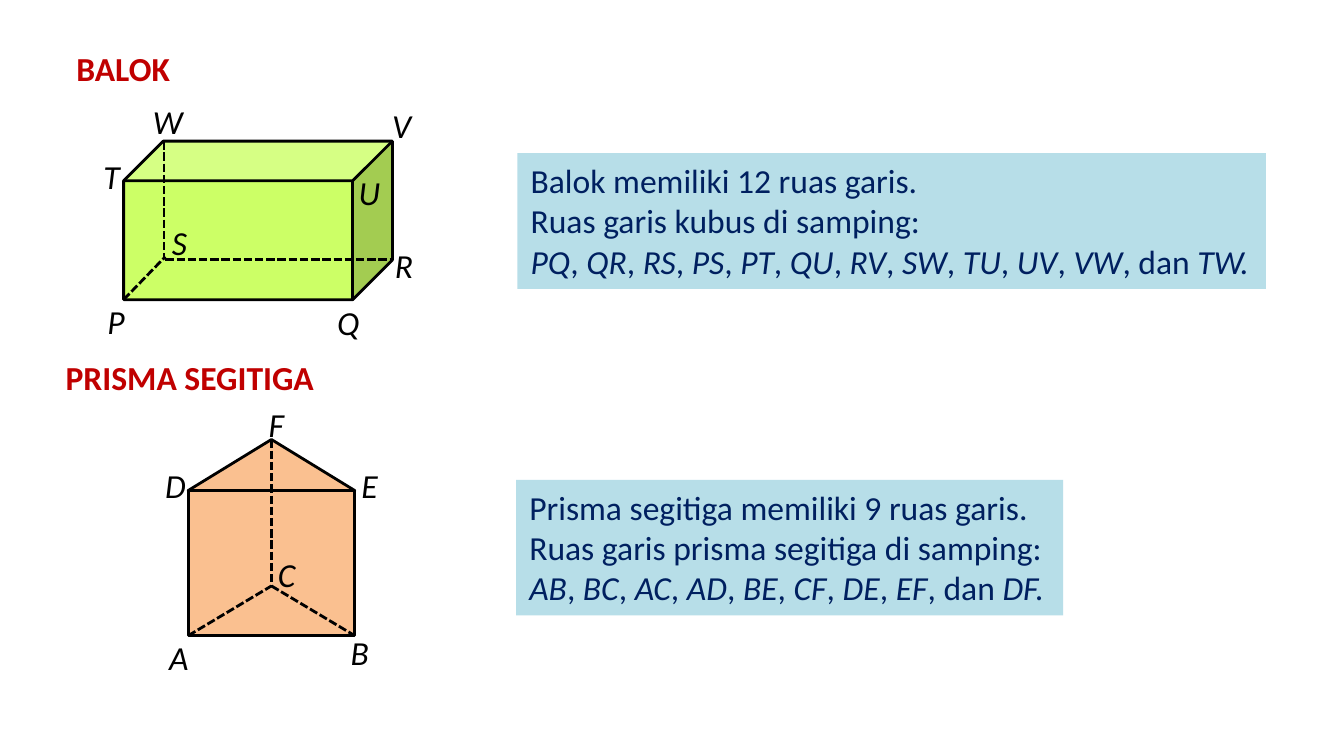
from dataclasses import dataclass

from pptx import Presentation
from pptx.dml.color import RGBColor
from pptx.enum.dml import MSO_LINE
from pptx.enum.shapes import MSO_CONNECTOR, MSO_SHAPE
from pptx.enum.text import MSO_ANCHOR, MSO_AUTO_SIZE, PP_ALIGN
from pptx.oxml.ns import qn
from pptx.util import Inches, Pt
from lxml import etree

CUBE, RECTANGLE, TRIANGLE = MSO_SHAPE.CUBE, MSO_SHAPE.RECTANGLE, MSO_SHAPE.ISOSCELES_TRIANGLE
STRAIGHT = MSO_CONNECTOR.STRAIGHT
DASH = MSO_LINE.SQUARE_DOT
GROW = MSO_AUTO_SIZE.SHAPE_TO_FIT_TEXT
LEFT, TOP = PP_ALIGN.LEFT, MSO_ANCHOR.TOP


@dataclass(frozen=True)
class Theme:
    font: str = "Calibri"
    size: int = 18
    outline: float = 1.5
    heading: str = "C00000"
    ink: str = "000000"
    note_text: str = "002060"
    note_fill: str = "B7DEE8"
    block: str = "CCFF66"
    prism: str = "FAC090"


THEME = Theme()
LINE_HEIGHT = 0.4


def write_paragraph(para, spans, color, **styles):
    """Write (text, italic) spans in one colour."""
    para.alignment = LEFT
    for text, italic in spans:
        span = para.add_run()
        span.text = text
        formats = {"name": THEME.font, "size": Pt(THEME.size), "italic": italic, **styles}
        for name, value in formats.items():
            setattr(span.font, name, value)
        span.font.color.rgb = RGBColor.from_string(color)


def set_frame(frame):
    formats = {"word_wrap": False, "auto_size": GROW, "vertical_anchor": TOP}
    for name, value in formats.items():
        setattr(frame, name, value)


def add_text(shapes, text, left, top, width, color, italic=False, bold=False):
    box = shapes.add_textbox(Inches(left), Inches(top), Inches(width), Inches(LINE_HEIGHT))
    set_frame(box.text_frame)
    write_paragraph(box.text_frame.paragraphs[0], [(text, italic)], color, bold=bold)


def add_solid(shapes, kind, left, top, width, height, fill, outlined=True):
    solid = shapes.add_shape(kind, Inches(left), Inches(top), Inches(width), Inches(height))
    solid.shadow.inherit = False
    solid.fill.solid()
    solid.fill.fore_color.rgb = RGBColor.from_string(fill)
    if outlined:
        solid.line.color.rgb = RGBColor.from_string(THEME.ink)
        solid.line.width = Pt(THEME.outline)
    else:
        solid.line.fill.background()
    return solid


def add_hidden_edge(shapes, start, end):
    edge = shapes.add_connector(STRAIGHT, *(Inches(value) for value in (*start, *end)))
    edge.line.color.rgb = RGBColor.from_string(THEME.ink)
    edge.line.width = Pt(THEME.outline)
    edge.line.dash_style = DASH
    etree.SubElement(edge._element.spPr, qn("a:effectLst"))
    return edge


def add_vertices(shapes, vertices):
    for letter, left, top, width in vertices:
        add_text(shapes, letter, left, top, width, THEME.ink, italic=True)


def add_note(shapes, left, top, width, sentences, edges):
    """Filled box: two sentences, then the edge names in italics."""
    box = add_solid(shapes, RECTANGLE, left, top, width, 1.01, THEME.note_fill, outlined=False)
    set_frame(box.text_frame)
    names = edges.split()
    separators = [", "] * (len(names) - 2) + [", dan "]
    spans = []
    for name, separator in zip(names, separators):
        spans += [(name, True), (separator, False)]
    spans.append((names[-1] + ".", True))
    lines = [[(sentence, False)] for sentence in sentences] + [spans]
    for index, line in enumerate(lines):
        para = box.text_frame.add_paragraph() if index else box.text_frame.paragraphs[0]
        write_paragraph(para, line, THEME.note_text)


def draw_block(shapes):
    add_solid(shapes, CUBE, 0.92, 1.05, 2, 1.18, THEME.block)
    add_hidden_edge(shapes, (1.22, 1.05), (1.22, 1.92))
    add_hidden_edge(shapes, (1.23, 1.93), (2.92, 1.93))
    add_hidden_edge(shapes, (0.92, 2.23), (1.23, 1.91))
    add_vertices(shapes, [
        ("P", 0.7, 2.19, 0.33), ("Q", 2.41, 2.2, 0.37),
        ("R", 2.84, 1.77, 0.34), ("S", 1.18, 1.6, 0.32),
        ("T", 0.67, 1.11, 0.32), ("U", 2.57, 1.23, 0.36),
        ("V", 2.82, 0.73, 0.35), ("W", 1.04, 0.7, 0.43),
    ])


def draw_prism(shapes):
    left, width, apex, eaves, base = 1.4, 1.24, 3.27, 3.65, 4.73
    middle = left + width / 2
    back = (middle, 4.36)
    add_solid(shapes, RECTANGLE, left, eaves, width, base - eaves, THEME.prism)
    roof = add_solid(shapes, TRIANGLE, left, apex, width, eaves - apex, THEME.prism)
    add_hidden_edge(shapes, (middle, apex), back).begin_connect(roof, 0)
    add_hidden_edge(shapes, (left, base), back)
    add_hidden_edge(shapes, back, (left + width, base))
    add_vertices(shapes, [
        ("A", 1.16, 4.69, 0.35), ("B", 2.51, 4.65, 0.35),
        ("C", 1.97, 4.07, 0.33), ("D", 1.13, 3.41, 0.36),
        ("E", 2.59, 3.41, 0.32), ("F", 1.9, 2.96, 0.32),
    ])


def main():
    # Widescreen page, 16:9
    deck = Presentation()
    deck.slide_width = Inches(10)
    deck.slide_height = Inches(10) * 9 // 16
    page = deck.slides.add_slide(deck.slide_layouts[6])
    shapes = page.shapes

    # Block
    add_text(shapes, "BALOK", 0.47, 0.31, 0.91, THEME.heading, bold=True)
    draw_block(shapes.add_group_shape().shapes)
    add_note(shapes, 3.85, 1.14, 5.57,
             ["Balok memiliki 12 ruas garis.", "Ruas garis kubus di samping:"],
             "PQ QR RS PS PT QU RV SW TU UV VW TW")

    # Triangular prism
    add_text(shapes, "PRISMA SEGITIGA", 0.39, 2.61, 2.07, THEME.heading, bold=True)
    draw_prism(shapes.add_group_shape().shapes)
    add_note(shapes, 3.84, 3.57, 4.07,
             ["Prisma segitiga memiliki 9 ruas garis.", "Ruas garis prisma segitiga di samping:"],
             "AB BC AC AD BE CF DE EF DF")

    deck.save("out.pptx")


if __name__ == "__main__":
    main()
